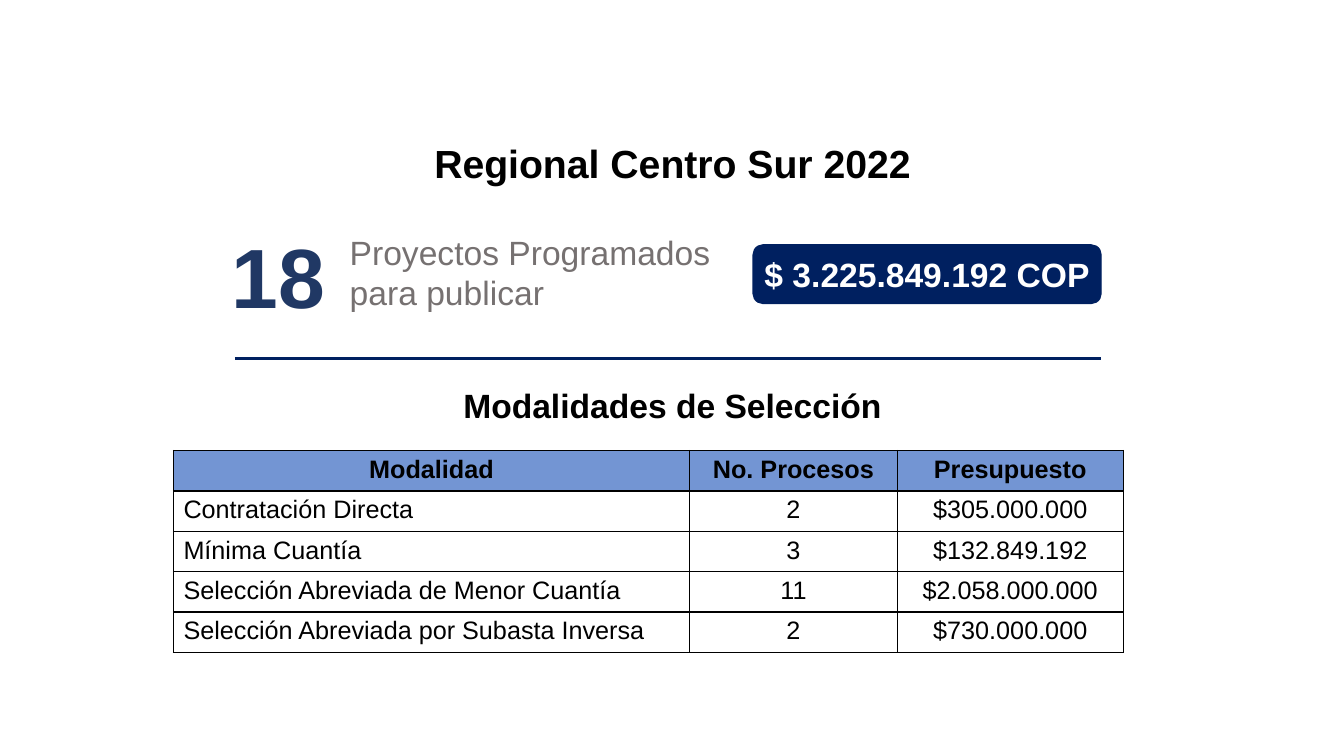
from dataclasses import dataclass

import pptx
import pptx.chart
import pptx.dml.color
import pptx.enum.shapes
import pptx.enum.text
import pptx.oxml
import pptx.oxml.ns
import pptx.util
from lxml import etree

Inches = pptx.util.Inches
Pt = pptx.util.Pt
RGB = pptx.dml.color.RGBColor.from_string
Align = pptx.enum.text.PP_ALIGN
Anchor = pptx.enum.text.MSO_ANCHOR
qn = pptx.oxml.ns.qn


@dataclass
class Theme:
    font: str = "Arial"
    black: str = "000000"
    white: str = "FFFFFF"
    navy: str = "002060"
    blue: str = "203864"
    gray: str = "767171"
    head: str = "7395D3"
    title: int = 28
    count: int = 60
    label: int = 24
    cell: int = 18


theme = Theme()


def write(frame, text, size, color, bold=False, align=Align.LEFT):
    """Put one styled paragraph in a text frame."""
    frame.text = text
    para = frame.paragraphs[0]
    para.alignment = align
    font = para.font
    font.name, font.size, font.bold = theme.font, Pt(size), bold
    font.color.rgb = RGB(color)


def edge(cell):
    """Draw a thin black border on all four sides of a cell."""
    props = cell._tc.get_or_add_tcPr()
    for side in ("lnL", "lnR", "lnT", "lnB"):
        line = etree.SubElement(props, qn("a:" + side), w=str(Pt(1)))
        fill = etree.SubElement(line, qn("a:solidFill"))
        etree.SubElement(fill, qn("a:srgbClr"), val=theme.black)


deck = pptx.Presentation()
deck.slide_width, deck.slide_height = Inches(13.33), Inches(7.5)
slide = deck.slides.add_slide(deck.slide_layouts[5])
shapes = slide.shapes

# Title
title = shapes.title
title.left, title.top = Inches(1.32), Inches(1.33)
title.width, title.height = Inches(10.7), Inches(0.57)
write(title.text_frame, "Regional Centro Sur 2022", theme.title,
      theme.black, True, Align.CENTER)

# Labels
labels = [
    ("18", 2.2, 2.18, 1.59, 1.11, theme.count, theme.blue, True, Align.LEFT),
    ("Proyectos Programados para publicar", 3.37, 2.25, 4.09, 0.91,
     theme.label, theme.gray, False, Align.LEFT),
    ("Modalidades de Selección", 4.35, 3.77, 4.64, 0.5,
     theme.label, theme.black, True, Align.CENTER),
]
for text, left, top, width, height, *style in labels:
    box = shapes.add_textbox(Inches(left), Inches(top), Inches(width), Inches(height))
    box.text_frame.word_wrap = True
    write(box.text_frame, text, *style)

# Budget total
total = shapes.add_shape(pptx.enum.shapes.MSO_SHAPE.ROUNDED_RECTANGLE,
                         Inches(7.47), Inches(2.43), Inches(3.45), Inches(0.58))
total.shadow.inherit = False
total.fill.solid()
total.fill.fore_color.rgb = RGB(theme.navy)
total.line.color.rgb = RGB(theme.navy)
total.line.width = Pt(1)
total.text_frame.word_wrap = False
total.text_frame.vertical_anchor = Anchor.MIDDLE
write(total.text_frame, "$ 3.225.849.192 COP", theme.label, theme.white,
      True, Align.CENTER)

# Divider
rule = shapes.add_connector(pptx.enum.shapes.MSO_CONNECTOR.STRAIGHT,
                            Inches(2.33), Inches(3.56), Inches(10.92), Inches(3.56))
rule.line.color.rgb = RGB(theme.navy)
rule.line.width = Pt(2.25)
etree.SubElement(rule._element.spPr, qn("a:effectLst"))

# Table of selection methods
rows = [
    ("Modalidad", "No. Procesos", "Presupuesto"),
    ("Contratación Directa", "2", "$305.000.000"),
    ("Mínima Cuantía", "3", "$132.849.192"),
    ("Selección Abreviada de Menor Cuantía", "11", "$2.058.000.000"),
    ("Selección Abreviada por Subasta Inversa", "2", "$730.000.000"),
]
table = shapes.add_table(len(rows), 3, Inches(1.72), Inches(4.47),
                         Inches(9.42), Inches(2)).table
table.first_row = table.horz_banding = False
for col, width in zip(table.columns, (5.12, 2.06, 2.24)):
    col.width = Inches(width)
for r, row in enumerate(rows):
    for c, text in enumerate(row):
        cell = table.cell(r, c)
        edge(cell)
        if r == 0:
            cell.fill.solid()
            cell.fill.fore_color.rgb = RGB(theme.head)
        else:
            cell.fill.background()
        align = Align.JUSTIFY if r and c == 0 else Align.CENTER
        write(cell.text_frame, text, theme.cell, theme.black, r == 0, align)

deck.save("out.pptx")
